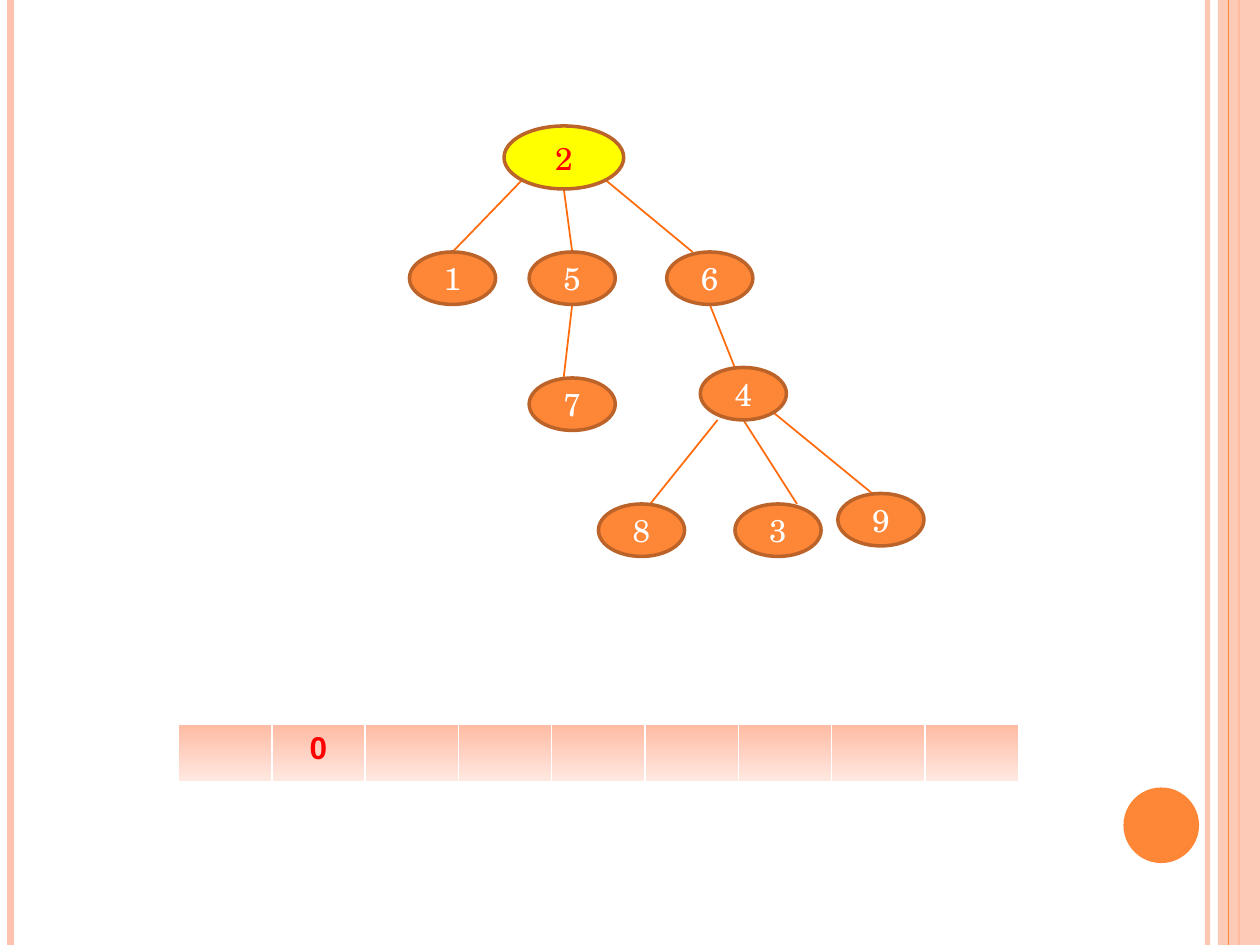
import pptx
import pptx.dml.color
import pptx.enum.shapes
import pptx.enum.text
import pptx.oxml.ns
import pptx.util
from lxml import etree

WHITE, ORANGE, PEACH = "FFFFFF", "FE8637", "FEC3AE"
RED, YELLOW, BROWN, EDGE = "FF0000", "FFFF00", "BC6329", "FF6B0A"
SHAPES = pptx.enum.shapes.MSO_SHAPE
CENTER = pptx.enum.text.PP_ALIGN.CENTER
qn = pptx.oxml.ns.qn

presentation = pptx.Presentation()
presentation.slide_width = pptx.util.Inches(10)
presentation.slide_height = pptx.util.Inches(7.5)
slide = presentation.slides.add_slide(presentation.slide_layouts[6])

# The slide is a grid of 120 columns by 90 rows of square units
UNIT = presentation.slide_width / 120


def color(hex_string):
    return pptx.dml.color.RGBColor.from_string(hex_string)


def add_line(x1, y1, x2, y2, hex_string, points):
    ends = [round(value * UNIT) for value in (x1, y1, x2, y2)]
    line = slide.shapes.add_connector(pptx.enum.shapes.MSO_CONNECTOR.STRAIGHT, *ends)
    line.line.color.rgb = color(hex_string)
    line.line.width = pptx.util.Pt(points)
    etree.SubElement(line._element.spPr, qn("a:effectLst"))
    return line


# Side stripes
stripes = [add_line(x, 0, x, 90, hex_string, points) for x, hex_string, points in
           [(115, PEACH, 3), (1, PEACH, 4.5), (118, ORANGE, 1.5)]]
band = slide.shapes.add_shape(SHAPES.RECTANGLE, *[round(v * UNIT) for v in (116, 0, 4, 90)])
add_line(117, 0, 117, 90, ORANGE, 0.75)

# Corner disc
disc = slide.shapes.add_shape(SHAPES.OVAL, *[round(v * UNIT) for v in (107, 75, 7.2, 7.2)])
for shape, hex_string in [(band, PEACH), (disc, ORANGE)]:
    shape.shadow.inherit = False
    shape.fill.solid()
    shape.fill.fore_color.rgb = color(hex_string)
    shape.line.fill.background()

# Partly transparent stripe and band
for shape, percent in [(stripes[0], 93), (band, 87)]:
    solid = next(shape._element.spPr.iter(qn("a:srgbClr")))
    etree.SubElement(solid, qn("a:alpha"), val=str(percent * 1000))

# Tree nodes: left, top, width, height in grid units
SMALL = (8.2, 5)
nodes = {
    "2": (48, 12, 11.4, 6),
    "1": (39, 24, *SMALL), "5": (50.4, 24, *SMALL), "6": (63.5, 24, *SMALL),
    "7": (50.4, 36, *SMALL), "4": (66.7, 35, *SMALL),
    "8": (57, 48, *SMALL), "3": (70, 48, *SMALL), "9": (79.8, 47, *SMALL),
}

# Tree edges: parent, share across and down it, child, share across its top
edges = [
    ("2", 0.15, 0.86, "1", 0.5), ("2", 0.5, 1, "5", 0.5), ("2", 0.85, 0.86, "6", 0.3),
    ("5", 0.5, 1, "7", 0.4), ("6", 0.5, 1, "4", 0.4),
    ("4", 0.2, 1, "8", 0.6), ("4", 0.5, 1, "3", 0.72), ("4", 0.85, 0.86, "9", 0.4),
]
for parent, across, down, child, child_across in edges:
    left, top, width, height = nodes[parent]
    child_left, child_top, child_width, _ = nodes[child]
    add_line(left + across * width, top + down * height,
             child_left + child_across * child_width, child_top, EDGE, 1)

for label, box in nodes.items():
    is_root = label == "2"
    node = slide.shapes.add_shape(SHAPES.OVAL, *[round(v * UNIT) for v in box])
    node.shadow.inherit = False
    node.fill.solid()
    node.fill.fore_color.rgb = color(YELLOW if is_root else ORANGE)
    node.line.color.rgb = color(BROWN)
    node.line.width = pptx.util.Pt(2)
    node.text_frame.vertical_anchor = pptx.enum.text.MSO_ANCHOR.MIDDLE
    paragraph = node.text_frame.paragraphs[0]
    paragraph.alignment = CENTER
    run = paragraph.add_run()
    run.text = label
    run.font.name = "TeX Gyre Schola"
    run.font.size = pptx.util.Pt(18)
    run.font.color.rgb = color(RED if is_root else WHITE)

# Parent array: one row of nine cells
frame = slide.shapes.add_table(1, 9, *[round(v * UNIT) for v in (17, 69, 80, 5.6)])
table = frame.table
table.first_row = table.horz_banding = False
for cell in table.iter_cells():
    cell.fill.gradient()
    cell.fill.gradient_angle = 270
    for stop, hex_string in zip(cell.fill.gradient_stops, ("FFBBA3", "FFEAE4")):
        stop.color.rgb = color(hex_string)
    properties = cell._tc.get_or_add_tcPr()
    for index, (side, points) in enumerate([("L", 1), ("R", 1), ("T", 1), ("B", 3)]):
        border = etree.Element(qn(f"a:ln{side}"), w=str(pptx.util.Pt(points)))
        solid = etree.SubElement(border, qn("a:solidFill"))
        etree.SubElement(solid, qn("a:srgbClr"), val=WHITE)
        properties.insert(index, border)

paragraph = table.cell(0, 1).text_frame.paragraphs[0]
paragraph.alignment = CENTER
run = paragraph.add_run()
run.text = "0"
run.font.name = "Arial"
run.font.size = pptx.util.Pt(18)
run.font.bold = True
run.font.color.rgb = color(RED)

presentation.save("out.pptx")
